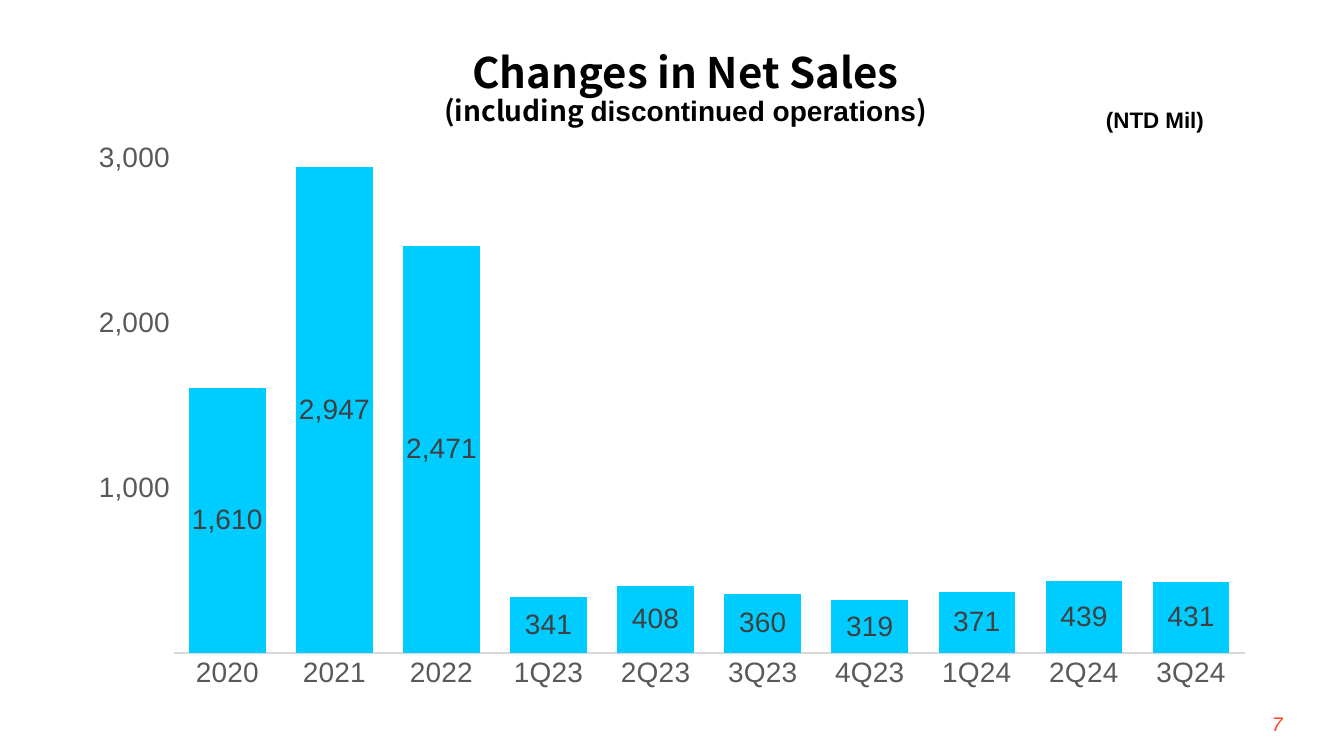
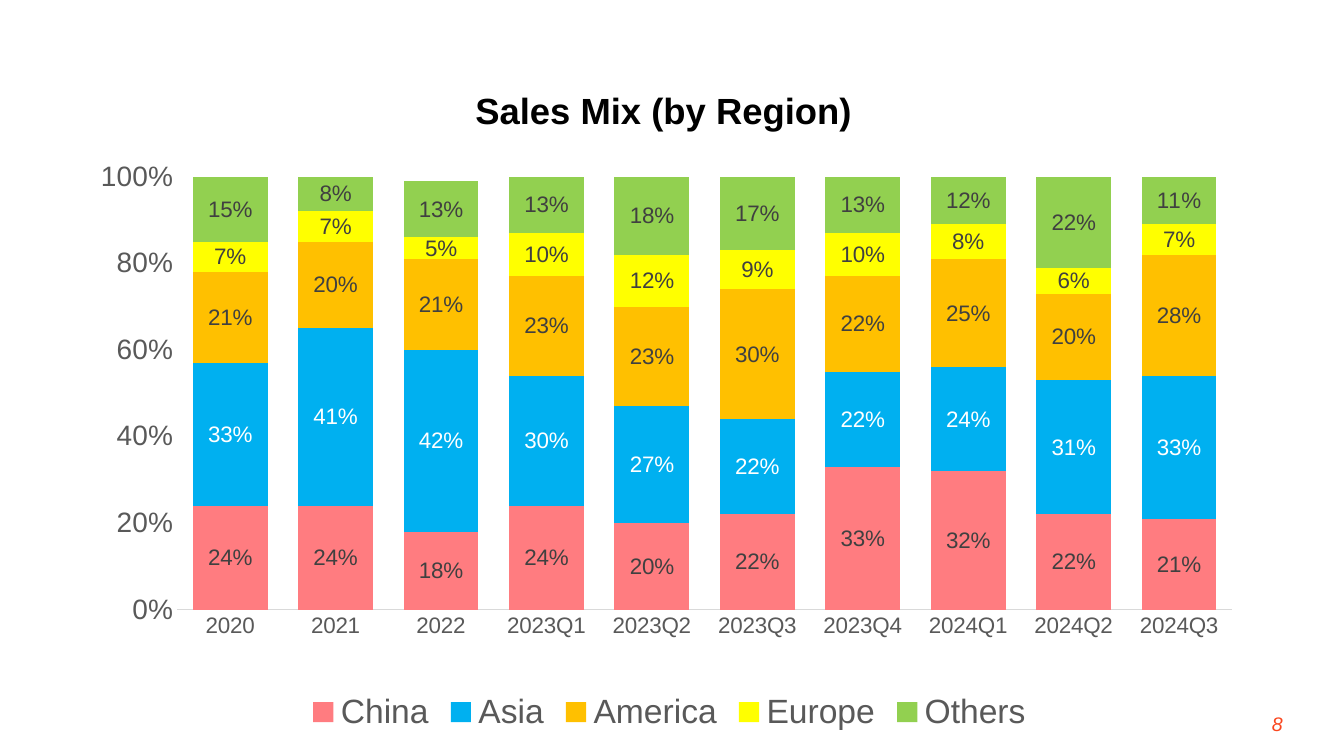
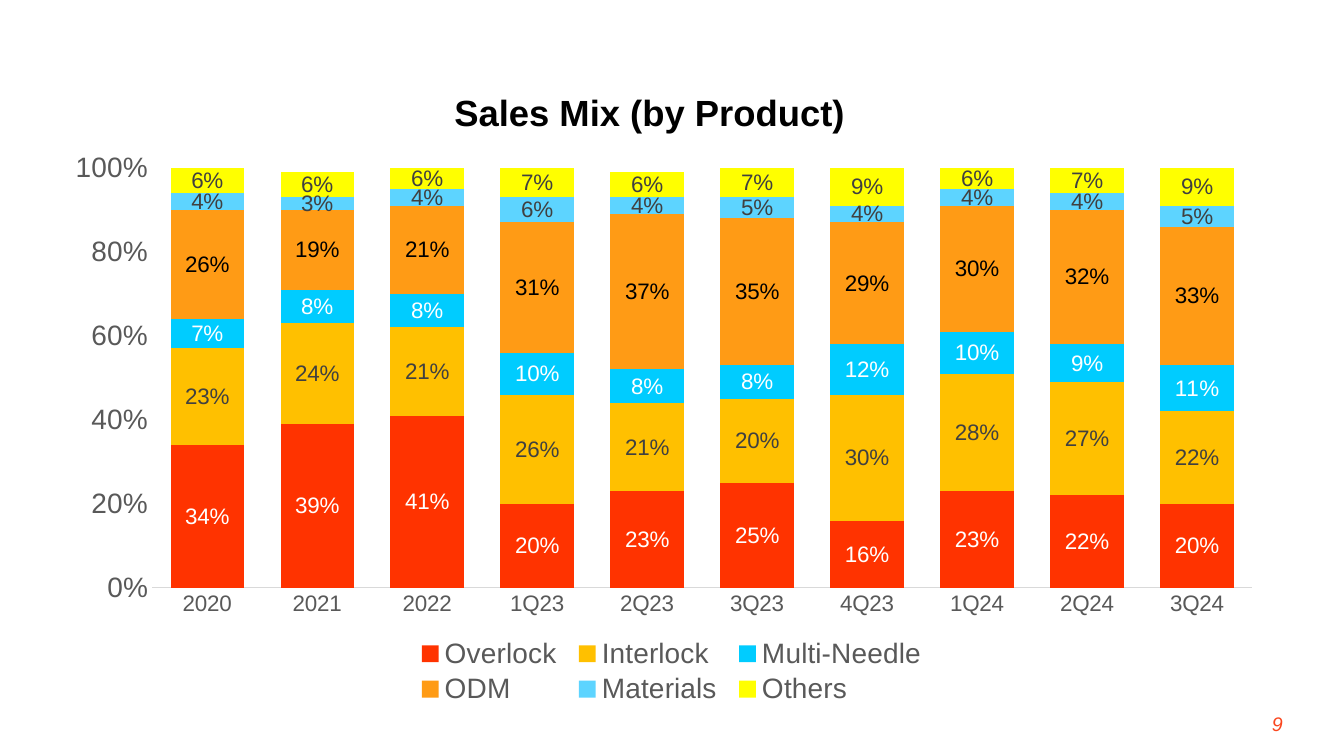
"""Build three slides on net sales and sales mix."""
from dataclasses import dataclass

from pptx import Presentation
from pptx.chart.data import CategoryChartData
from pptx.dml.color import RGBColor
from pptx.enum.chart import XL_CHART_TYPE, XL_LABEL_POSITION, XL_LEGEND_POSITION, XL_TICK_MARK
from pptx.enum.text import MSO_ANCHOR, MSO_AUTO_SIZE, PP_ALIGN
from pptx.oxml import parse_xml
from pptx.oxml.ns import nsdecls, qn
from pptx.util import Inches, Pt

STACKED = XL_CHART_TYPE.COLUMN_STACKED
MIDDLE = XL_LABEL_POSITION.CENTER
BOTTOM = XL_LEGEND_POSITION.BOTTOM
NO_TICK = XL_TICK_MARK.NONE
TOP = MSO_ANCHOR.TOP
FIXED = MSO_AUTO_SIZE.NONE
CENTER, RIGHT = PP_ALIGN.CENTER, PP_ALIGN.RIGHT


@dataclass(frozen=True)
class Theme:
    """Colours, fonts and type sizes."""
    sans: str = "Arial"
    head: str = "Noto Sans CJK SC"
    ink: str = "000000"
    white: str = "FFFFFF"
    label: str = "404040"
    axis: str = "595959"
    rule: str = "D9D9D9"
    page: str = "FA461E"
    cyan: str = "00CCFF"
    blue: str = "00B0F0"
    sky: str = "5DD4FF"
    pink: str = "FF7C80"
    red: str = "FF3300"
    gold: str = "FFC000"
    orange: str = "FF9B15"
    yellow: str = "FFFF00"
    green: str = "92D050"
    top: int = 30
    title: int = 26
    large: int = 24
    mid: int = 20
    small: int = 16
    foot: int = 14


T = Theme()
FIRST = 7
PAGE_BOX = (12.07, 7.01, 0.75, 0.4)
THOUSANDS = r"#,###,;[Red]\(#,\)"
YEARS = ["2020", "2021", "2022"]
SHORT = YEARS + ["1Q23", "2Q23", "3Q23", "4Q23", "1Q24", "2Q24", "3Q24"]
LONG = YEARS + ["2023Q1", "2023Q2", "2023Q3", "2023Q4", "2024Q1", "2024Q2", "2024Q3"]

SALES = [("Series 1", T.cyan, T.label,
          [1610, 2947, 2471, 341, 408, 360, 319, 371, 439, 431])]
REGIONS = [
    ("China", T.pink, T.label, [24, 24, 18, 24, 20, 22, 33, 32, 22, 21]),
    ("Asia", T.blue, T.white, [33, 41, 42, 30, 27, 22, 22, 24, 31, 33]),
    ("America", T.gold, T.label, [21, 20, 21, 23, 23, 30, 22, 25, 20, 28]),
    ("Europe", T.yellow, T.label, [7, 7, 5, 10, 12, 9, 10, 8, 6, 7]),
    ("Others", T.green, T.label, [15, 8, 13, 13, 18, 17, 13, 12, 22, 11]),
]
PRODUCTS = [
    ("Overlock", T.red, T.white, [34, 39, 41, 20, 23, 25, 16, 23, 22, 20]),
    ("Interlock", T.gold, T.label, [23, 24, 21, 26, 21, 20, 30, 28, 27, 22]),
    ("Multi-Needle", T.cyan, T.white, [7, 8, 8, 10, 8, 8, 12, 10, 9, 11]),
    ("ODM", T.orange, T.ink, [26, 19, 21, 31, 37, 35, 29, 30, 32, 33]),
    ("Materials", T.sky, T.label, [4, 3, 4, 6, 4, 5, 4, 4, 4, 5]),
    ("Others", T.yellow, T.label, [6, 6, 6, 7, 6, 7, 9, 6, 7, 9]),
]

SLIDES = [
    dict(
        title=[[("Changes in Net Sales", T.top, T.head)],
               [("(including ", T.mid, T.head),
                ("discontinued operations", T.mid, T.sans),
                (")", T.mid, T.head)]],
        box=(4.04, 0.47, 5.52, 0.54), space=0.9,
        note=("(NTD Mil)", (10.86, 1, 1.19, 0.37)),
        chart=dict(box=(0.78, 1.29, 11.8, 5.64), cats=SHORT, rows=SALES, scale=1000,
                   size=T.mid, line=1, gap=40, peak=3000000, step=1000000,
                   fmt=THOUSANDS, plot=(0.08, 0.05, 0.9, 0.87))),
    dict(
        title=[[("Sales Mix (by Region) ", T.title, T.sans)]],
        box=(4.33, 0.82, 4.61, 0.54),
        chart=dict(box=(0.83, 1.27, 11.62, 6.05), cats=LONG, rows=REGIONS, gap=41,
                   key=T.large, plot=(0.08, 0.08, 0.9, 0.71))),
    dict(
        title=[[("Sales Mix (by Product) ", T.title, T.sans)]],
        box=(3.99, 0.84, 5.01, 0.54),
        chart=dict(box=(0.54, 1.38, 12.12, 5.71), cats=SHORT, rows=PRODUCTS, gap=50,
                   key=T.mid, plot=(0.08, 0.05, 0.9, 0.73),
                   spot=(0.29, 0.86, 0.43, 0.13))),
]


def style(font, size, color, name=T.sans, bold=False, italic=False):
    font.size, font.name = Pt(size), name
    font.bold, font.italic = bold, italic
    font.color.rgb = RGBColor.from_string(color)


def write(shape, lines, color=T.ink, align=CENTER, space=1, wrap=True, **look):
    frame = shape.text_frame
    frame.word_wrap, frame.auto_size = wrap, FIXED
    frame.vertical_anchor = TOP
    para = frame.paragraphs[0]
    para.alignment, para.line_spacing = align, space
    for i, line in enumerate(lines):
        if i:
            para.add_line_break()
        for text, size, name in line:
            run = para.add_run()
            run.text = text
            style(run.font, size, color, name, **look)


def place(shape, box):
    shape.left, shape.top, shape.width, shape.height = map(Inches, box)


def arrange(node, box, after=None, inner=False):
    for old in node.findall(qn("c:layout")):
        node.remove(old)
    target = '<c:layoutTarget val="inner"/>' if inner else ""
    modes = "".join(f'<c:{k}Mode val="edge"/>' for k in "xy")
    sizes = "".join(f'<c:{k} val="{v}"/>' for k, v in zip("xywh", box))
    layout = parse_xml(f'<c:layout {nsdecls("c")}><c:manualLayout>{target}{modes}{sizes}'
                       '</c:manualLayout></c:layout>')
    if after is None:
        node.insert(0, layout)
    else:
        node.find(qn(after)).addnext(layout)


def add_chart(slide, box, cats, rows, gap, plot, scale=0.01, size=T.small, line=0.75,
              peak=1, step=0.2, fmt="0%", key=None, spot=None):
    data = CategoryChartData(number_format=fmt)
    data.categories = cats
    for name, _, _, vals in rows:
        data.add_series(name, [round(v * scale, 2) for v in vals])
    chart = slide.shapes.add_chart(STACKED, *map(Inches, box), data).chart
    chart.has_title = False
    style(chart.font, size, T.ink)

    bars = chart.plots[0]
    bars.gap_width, bars.overlap, bars.vary_by_categories = gap, 100, False
    for series, (_, fill, ink, _) in zip(bars.series, rows):
        series.format.fill.solid()
        series.format.fill.fore_color.rgb = RGBColor.from_string(fill)
        series.invert_if_negative = False
        labels = series.data_labels
        labels.show_value, labels.position = True, MIDDLE
        labels.number_format, labels.number_format_is_linked = fmt, False
        style(labels.font, size, ink)

    base, side = chart.category_axis, chart.value_axis
    for axis, points in ((base, size), (side, T.mid)):
        axis.major_tick_mark = axis.minor_tick_mark = NO_TICK
        axis.has_major_gridlines = False
        style(axis.tick_labels.font, points, T.axis)
    base.format.line.color.rgb = RGBColor.from_string(T.rule)
    base.format.line.width = Pt(line)
    side.format.line.fill.background()
    side.minimum_scale, side.maximum_scale, side.major_unit = 0, peak, step
    side.tick_labels.number_format = fmt
    side.tick_labels.number_format_is_linked = False

    arrange(chart.element.find(".//" + qn("c:plotArea")), plot, inner=True)
    chart.has_legend = key is not None
    if key:
        chart.legend.position = BOTTOM
        chart.legend.include_in_layout = False
        style(chart.legend.font, key, T.axis)
    if spot:
        arrange(chart.element.find(".//" + qn("c:legend")), spot, after="c:legendPos")


def add_text(slide, text, box, size, **look):
    shape = slide.shapes.add_textbox(*map(Inches, box))
    write(shape, [[(text, size, T.sans)]], **look)


def main():
    deck = Presentation()
    deck.slide_width, deck.slide_height = Inches(13.33), Inches(7.5)
    for page, item in enumerate(SLIDES, FIRST):
        slide = deck.slides.add_slide(deck.slide_layouts[5])
        place(slide.shapes.title, item["box"])
        write(slide.shapes.title, item["title"], space=item.get("space", 1), bold=True)
        if "note" in item:
            add_text(slide, *item["note"], T.small, wrap=False, bold=True)
        add_text(slide, str(page), PAGE_BOX, T.foot, color=T.page, align=RIGHT, italic=True)
        add_chart(slide, **item["chart"])
    deck.save("out.pptx")


if __name__ == "__main__":
    main()
